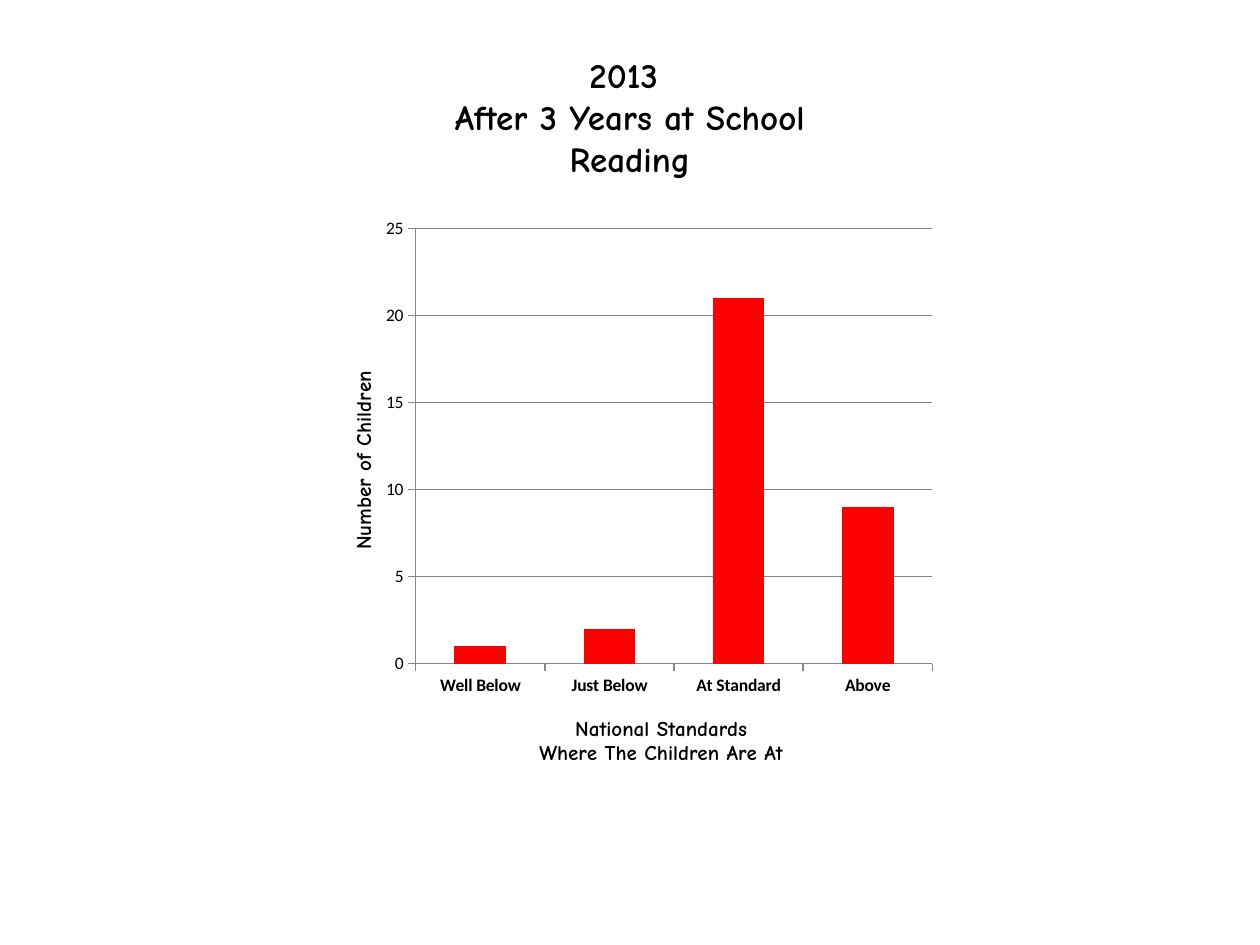
from dataclasses import dataclass

from lxml import etree
from pptx import Presentation
from pptx import util as u
from pptx.chart.data import CategoryChartData
from pptx.dml.color import RGBColor
from pptx.enum import chart as charts, text
from pptx.oxml.ns import qn


@dataclass(frozen=True)
class Theme:
    ink: RGBColor = RGBColor(0, 0, 0)
    bar: RGBColor = RGBColor(0xFF, 0, 0)
    line: RGBColor = RGBColor(0x86, 0x86, 0x86)
    display: str = "Comic Neue"
    body: str = "Calibri"
    title_size: u.Pt = u.Pt(20)
    axis_title_size: u.Pt = u.Pt(12)
    label_size: u.Pt = u.Pt(10)


@dataclass(frozen=True)
class AxisTitle:
    words: str
    x: float
    y: float


THEME = Theme()
CATEGORY_TITLE = AxisTitle("National Standards\nWhere The Children Are At", 0.35, 0.84)
VALUE_TITLE = AxisTitle("Number of Children", 0.05, 0.27)
RESULTS = {"Well Below": 1, "Just Below": 2, "At Standard": 21, "Above": 9}


def set_font(font, name: str, size: u.Pt, bold: bool) -> None:
    font.name, font.size, font.bold = name, size, bold
    font.color.rgb = THEME.ink


def place(element, index: int, **fractions: float) -> None:
    """Give a chart part a manual layout in fractions of the chart."""
    for old in element.findall(qn("c:layout")):
        element.remove(old)
    layout = etree.Element(qn("c:layout"))
    manual = etree.SubElement(layout, qn("c:manualLayout"))
    if "w" in fractions:
        etree.SubElement(manual, qn("c:layoutTarget")).set("val", "inner")
    for mode in ("xMode", "yMode"):
        etree.SubElement(manual, qn(f"c:{mode}")).set("val", "edge")
    for key, value in fractions.items():
        etree.SubElement(manual, qn(f"c:{key}")).set("val", str(value))
    element.insert(index, layout)


def style_axis(axis, title: AxisTitle, bold_labels: bool) -> None:
    axis.major_tick_mark = charts.XL_TICK_MARK.OUTSIDE
    axis.minor_tick_mark = charts.XL_TICK_MARK.NONE
    axis.format.line.color.rgb = THEME.line
    axis.format.line.width = u.Pt(0.75)
    set_font(axis.tick_labels.font, THEME.body, THEME.label_size, bold_labels)
    tf = axis.axis_title.text_frame
    tf.text = title.words
    for p in tf.paragraphs:
        set_font(p.font, THEME.display, THEME.axis_title_size, True)


def add_title(slide) -> None:
    sp = slide.shapes.add_textbox(u.Inches(0.5), u.Inches(0.3), u.Inches(9), u.Inches(1.25))
    tf = sp.text_frame
    tf.word_wrap = True
    tf.vertical_anchor = text.MSO_ANCHOR.MIDDLE
    p = tf.paragraphs[0]
    p.text = "2013 \vAfter 3 Years at School\vReading"
    p.alignment = text.PP_ALIGN.CENTER
    set_font(p.font, THEME.display, THEME.title_size, True)


def add_results_chart(slide) -> None:
    data = CategoryChartData()
    data.categories = list(RESULTS)
    data.add_series("Series 1", list(RESULTS.values()))
    chart = slide.shapes.add_chart(
        charts.XL_CHART_TYPE.COLUMN_CLUSTERED,
        u.Inches(2.5), u.Inches(1.62), u.Inches(5), u.Inches(4.8), data,
    ).chart
    chart.has_legend = chart.has_title = False
    set_font(chart.font, THEME.body, THEME.label_size, False)

    # Bars
    plot = chart.plots[0]
    plot.gap_width = 150
    plot.vary_by_categories = False
    fill = plot.series[0].format.fill
    fill.solid()
    fill.fore_color.rgb = THEME.bar

    # Axes and gridlines
    style_axis(chart.category_axis, CATEGORY_TITLE, True)
    axis = chart.value_axis
    style_axis(axis, VALUE_TITLE, False)
    axis.minimum_scale, axis.maximum_scale, axis.major_unit = 0, 25, 5
    axis.has_major_gridlines = True
    axis.major_gridlines.format.line.color.rgb = THEME.line
    axis.major_gridlines.format.line.width = u.Pt(0.75)

    # Positions inside the chart
    area = chart.element.find(".//" + qn("c:plotArea"))
    place(area, 0, x=0.16, y=0.04, w=0.82, h=0.72)
    for tag, title in (("c:catAx", CATEGORY_TITLE), ("c:valAx", VALUE_TITLE)):
        place(area.find(f"{qn(tag)}/{qn('c:title')}"), 1, x=title.x, y=title.y)
    body = area.find(f"{qn('c:valAx')}/{qn('c:title')}//{qn('a:bodyPr')}")
    body.set("rot", "-5400000")
    body.set("vert", "horz")


def main() -> None:
    prs = Presentation()
    prs.slide_width, prs.slide_height = u.Inches(10), u.Inches(7.5)
    slide = prs.slides.add_slide(prs.slide_layouts[6])
    add_title(slide)
    add_results_chart(slide)
    prs.save("out.pptx")


if __name__ == "__main__":
    main()
